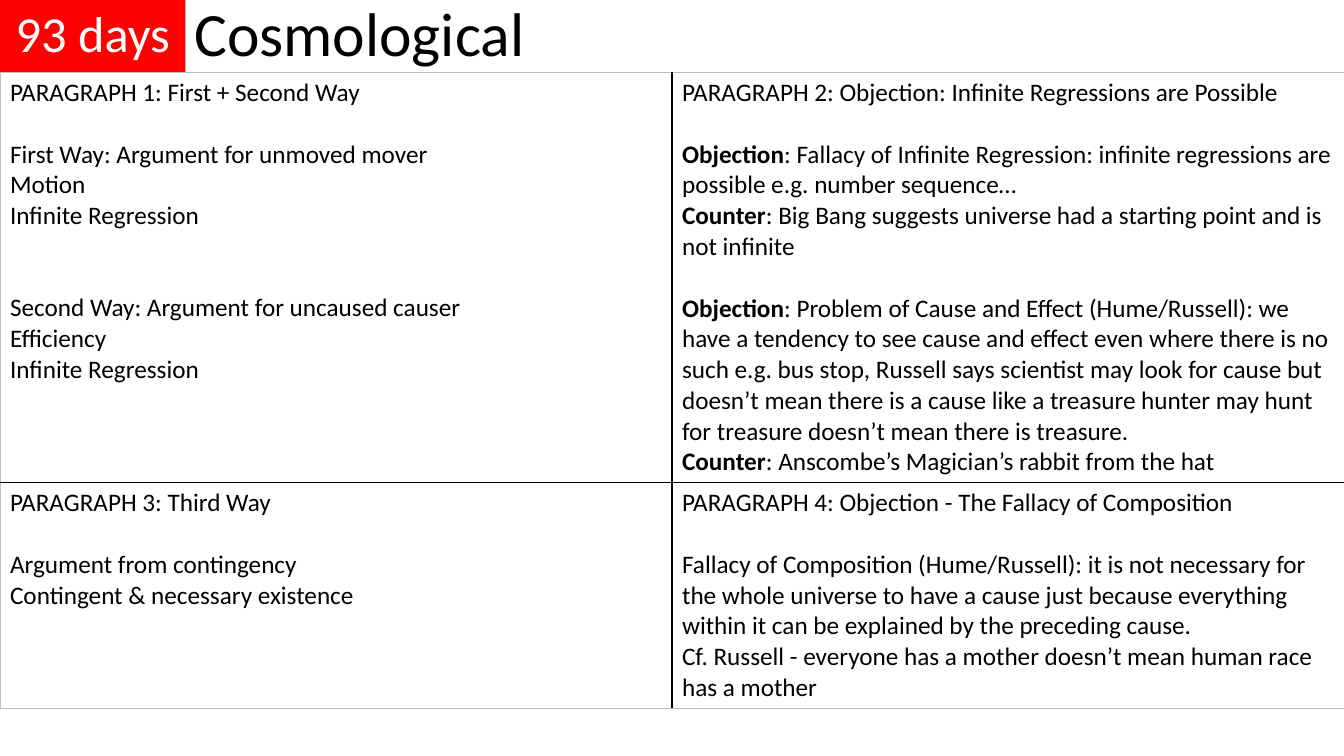
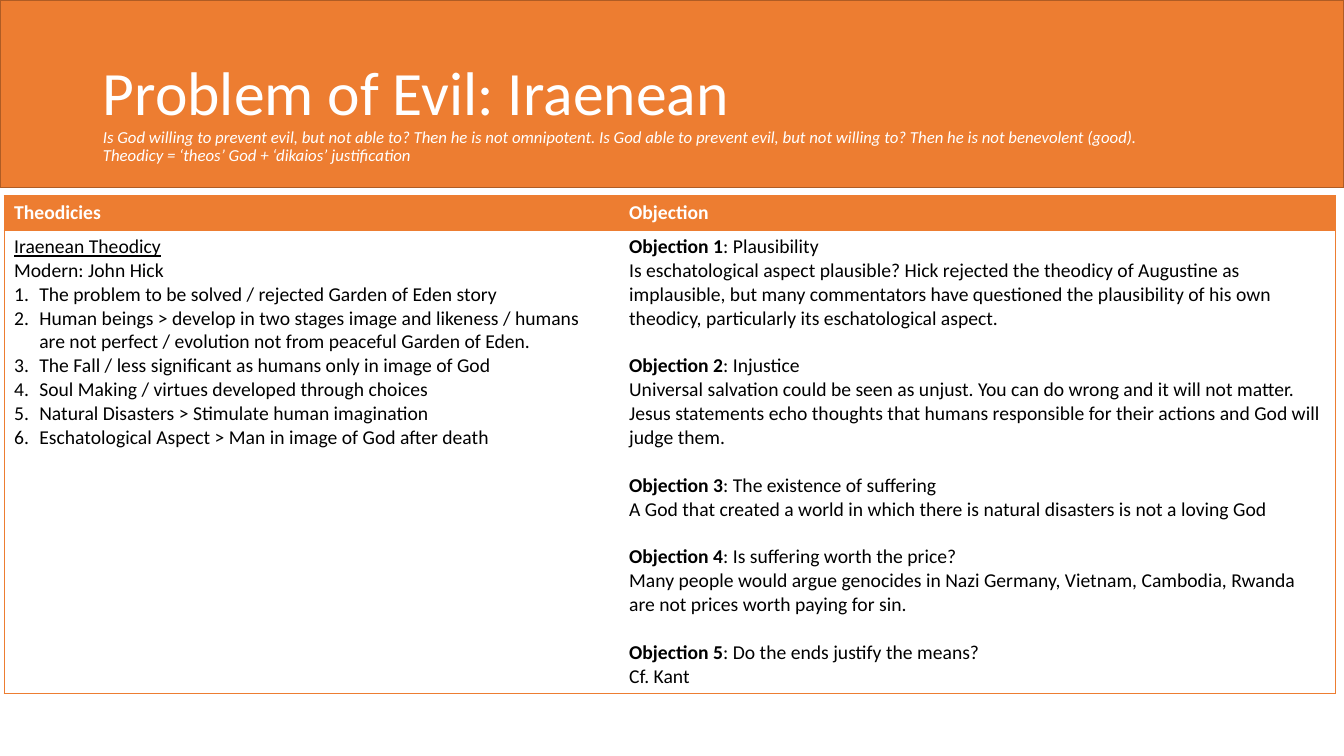
"""Build two revision slides on arguments about God."""
from lxml.etree import SubElement
from pptx import Presentation
from pptx.dml.color import RGBColor
from pptx.enum.shapes import MSO_SHAPE
from pptx.enum.text import MSO_ANCHOR, MSO_AUTO_SIZE, PP_ALIGN
from pptx.oxml import parse_xml
from pptx.oxml.ns import nsdecls, qn
from pptx.util import Inches, Pt

RED, ORANGE, BROWN = "FF0000", "ED7D31", "AF5C24"
BLACK, WHITE, GREY = "000000", "FFFFFF", "BFBFBF"
WIDE = 13.33


def hue(code):
    return RGBColor.from_string(code)


def write(par, text, size, color, **extra):
    run = par.add_run()
    run.text = text
    form = {"name": "Calibri", "size": Pt(size), "bold": False, **extra}
    for key, value in form.items():
        setattr(run.font, key, value)
    run.font.color.rgb = hue(color)


deck = Presentation()
deck.slide_width, deck.slide_height = Inches(WIDE), Inches(7.5)
cause, evil = [deck.slides.add_slide(deck.slide_layouts[5]) for _ in range(2)]

topic = cause.shapes.add_textbox(0, 0, 0, 0)
frames = [
    (cause.shapes.title, (0, 0, 1.84, 0.72), MSO_ANCHOR.MIDDLE, PP_ALIGN.CENTER, 0.9),
    (topic, (1.83, 0, 11.5, 0.72), MSO_ANCHOR.TOP, PP_ALIGN.LEFT, 0.8),
    (evil.shapes.title, (0.92, 0.4, 11.5, 1.45), MSO_ANCHOR.MIDDLE, PP_ALIGN.LEFT, 0.9),
]
heads = [
    [("93 days", 36, WHITE, False)],
    [("Cosmological", 44, BLACK, False)],
    [
        ("Problem of Evil: Iraenean", 44, WHITE, False),
        ("Is God willing to prevent evil, but not able to? Then he is not omnipotent. "
         "Is God able to prevent evil, but not willing to? Then he is not benevolent (good).",
         12, WHITE, True),
        ("Theodicy = ‘theos’ God + ‘dikaios’ justification", 12, WHITE, True),
    ],
]
for (shape, place, anchor, align, space), lines in zip(frames, heads):
    shape.left, shape.top, shape.width, shape.height = map(Inches, place)
    frame = shape.text_frame
    form = {"word_wrap": True, "auto_size": MSO_AUTO_SIZE.NONE, "vertical_anchor": anchor}
    for key, value in form.items():
        setattr(frame, key, value)
    for num, (text, size, color, slant) in enumerate(lines):
        par = frame.add_paragraph() if num else frame.paragraphs[0]
        par.alignment, par.line_spacing = align, space
        write(par, text, size, color, italic=slant)
topic.text_frame.margin_top = Inches(0.09)
badge = cause.shapes.title
badge.fill.solid()
badge.fill.fore_color.rgb = hue(RED)

band = evil.shapes.add_shape(MSO_SHAPE.RECTANGLE, 0, 0, Inches(WIDE), Inches(1.86))
band.shadow.inherit = False
band.fill.solid()
band.fill.fore_color.rgb = hue(ORANGE)
band.line.color.rgb = hue(BROWN)
band.line.width = Pt(1)
evil.shapes.title.element.addprevious(band.element)

ways = [
    [
        [
            (0, "", "PARAGRAPH 1: First + Second Way"),
            (1, "", "First Way: Argument for unmoved mover"),
            (0, "", "Motion"),
            (0, "", "Infinite Regression"),
            (2, "", "Second Way: Argument for uncaused causer"),
            (0, "", "Efficiency"),
            (0, "", "Infinite Regression"),
        ],
        [
            (0, "", "PARAGRAPH 2: Objection: Infinite Regressions are Possible"),
            (1, "Objection", ": Fallacy of Infinite Regression: infinite regressions are "
             "possible e.g. number sequence…"),
            (0, "Counter", ": Big Bang suggests universe had a starting point and is not infinite"),
            (1, "Objection", ": Problem of Cause and Effect (Hume/Russell): we have a tendency "
             "to see cause and effect even where there is no such e.g. bus stop, Russell says "
             "scientist may look for cause but doesn’t mean there is a cause like a treasure "
             "hunter may hunt for treasure doesn’t mean there is treasure."),
            (0, "Counter", ": Anscombe’s Magician’s rabbit from the hat"),
        ],
    ],
    [
        [
            (0, "", "PARAGRAPH 3: Third Way"),
            (1, "", "Argument from contingency"),
            (0, "", "Contingent & necessary existence"),
        ],
        [
            (0, "", "PARAGRAPH 4: Objection - The Fallacy of Composition"),
            (1, "", "Fallacy of Composition (Hume/Russell): it is not necessary for the whole "
             "universe to have a cause just because everything within it can be explained by "
             "the preceding cause."),
            (0, "", "Cf. Russell - everyone has a mother doesn’t mean human race has a mother"),
        ],
    ],
]
claims = [
    [[(0, "Theodicies", "")], [(0, "Objection", "")]],
    [
        [
            (0, "", "Iraenean Theodicy"),
            (0, "", "Modern: John Hick"),
            (0, "", "The problem to be solved / rejected Garden of Eden story"),
            (0, "", "Human beings > develop in two stages image and likeness / humans are not "
             "perfect / evolution not from peaceful Garden of Eden."),
            (0, "", "The Fall / less significant as humans only in image of God"),
            (0, "", "Soul Making / virtues developed through choices"),
            (0, "", "Natural Disasters > Stimulate human imagination"),
            (0, "", "Eschatological Aspect > Man in image of God after death"),
        ],
        [
            (0, "Objection 1", ": Plausibility"),
            (0, "", "Is eschatological aspect plausible? Hick rejected the theodicy of Augustine "
             "as implausible, but many commentators have questioned the plausibility of his own "
             "theodicy, particularly its eschatological aspect."),
            (1, "Objection 2", ": Injustice"),
            (0, "", "Universal salvation could be seen as unjust. You can do wrong and it will "
             "not matter. Jesus statements echo thoughts that humans responsible for their "
             "actions and God will judge them."),
            (1, "Objection 3", ": The existence of suffering"),
            (0, "", "A God that created a world in which there is natural disasters is not a "
             "loving God"),
            (1, "Objection 4", ": Is suffering worth the price?"),
            (0, "", "Many people would argue genocides in Nazi Germany, Vietnam, Cambodia, "
             "Rwanda are not prices worth paying for sin."),
            (1, "Objection 5", ": Do the ends justify the means?"),
            (0, "", "Cf. Kant"),
        ],
    ],
]

plans = [
    (cause, (0, 0.72), (WIDE / 2, WIDE / 2), (4.07, 2.23), 18, ways, None,
     (GREY, 0.5), (BLACK, 1), (BLACK, 1)),
    (evil, (0.04, 1.94), (6.1, 7.1), (0.34, 4.59), 14, claims, ORANGE,
     (ORANGE, 0.5), (ORANGE, 0.5), None),
]
grids = []
for slide, (left, top), cols, rows, size, cells, fill, edge, rule, split in plans:
    grid = slide.shapes.add_table(2, 2, Inches(left), Inches(top),
                                  Inches(sum(cols)), Inches(sum(rows))).table
    grids.append(grid)
    grid.first_row = grid.horz_banding = False
    for num in range(2):
        grid.columns[num].width = Inches(cols[num])
        grid.rows[num].height = Inches(rows[num])
    for row in range(2):
        for col in range(2):
            cell = grid.cell(row, col)
            head = fill and row == 0
            for num, (gap, lead, rest) in enumerate(cells[row][col]):
                frame = cell.text_frame
                par = frame.add_paragraph() if num else frame.paragraphs[0]
                par.space_before = Pt(round(gap * size * 1.22, 1))
                for text, bold in ((lead, True), (rest, False)):
                    if text:
                        write(par, text, size, WHITE if head else BLACK, bold=bold)
            sides = {
                "L": split if col else edge, "R": edge if col else split,
                "T": rule if row else edge, "B": edge if row else rule,
            }
            props = cell._tc.get_or_add_tcPr()
            for side, line in sides.items():
                color, width = line or (None, 0)
                paint = f'<a:solidFill><a:srgbClr val="{color}"/></a:solidFill>'
                props.append(parse_xml(
                    f'<a:ln{side} {nsdecls("a")} w="{Pt(width)}">'
                    f'{paint if line else "<a:noFill/>"}</a:ln{side}>'))
            if head:
                cell.fill.solid()
                cell.fill.fore_color.rgb = hue(fill)
            else:
                cell.fill.background()

notes = grids[1].cell(1, 0).text_frame.paragraphs
notes[0].runs[0].font.underline = True
for par in notes[2:]:
    props = par._p.get_or_add_pPr()
    props.set("marL", str(Inches(0.25)))
    props.set("indent", str(-Inches(0.25)))
    SubElement(props, qn("a:buFont"), typeface="+mj-lt")
    SubElement(props, qn("a:buAutoNum"), type="arabicPeriod")

deck.save("out.pptx")
